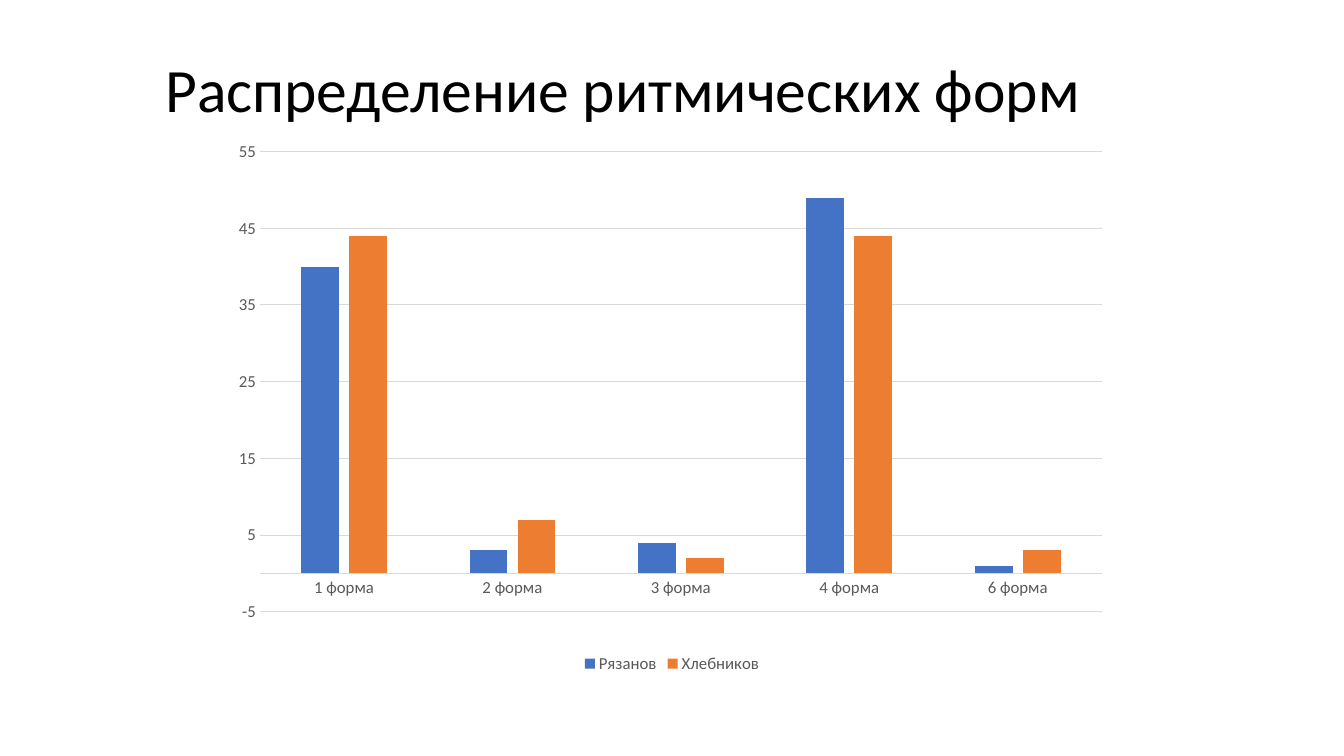
from lxml.etree import SubElement
from pptx import Presentation
from pptx.chart.data import CategoryChartData
from pptx.dml.color import RGBColor
from pptx.enum.chart import XL_CHART_TYPE as ChartType, XL_LEGEND_POSITION as LegendPos, XL_TICK_MARK as Tick
from pptx.enum.text import MSO_ANCHOR as Anchor
from pptx.oxml.ns import qn
from pptx.util import Pt

FONT = "Calibri"
BLACK = RGBColor(0x00, 0x00, 0x00)
GREY = RGBColor(0x59, 0x59, 0x59)
RULE = RGBColor(0xD9, 0xD9, 0xD9)
BLUE = RGBColor(0x44, 0x72, 0xC4)
ORANGE = RGBColor(0xED, 0x7D, 0x31)

FORMS = [f"{n} форма" for n in (1, 2, 3, 4, 6)]
POETS = [
    ("Рязанов", (40, 3, 4, 49, 1), BLUE),
    ("Хлебников", (44, 7, 2, 44, 3), ORANGE),
]


def style_font(font, size, color):
    font.name = FONT
    font.size = Pt(size)
    font.bold = False
    font.color.rgb = color


def style_line(line):
    line.color.rgb = RULE
    line.width = Pt(0.75)


def add_title(slide, text, x, y, w, h):
    tf = slide.shapes.add_textbox(Pt(x), Pt(y), Pt(w), Pt(h)).text_frame
    tf.word_wrap = True
    tf.vertical_anchor = Anchor.MIDDLE
    p = tf.paragraphs[0]
    p.line_spacing = 0.9
    r = p.add_run()
    r.text = text
    style_font(r.font, 44, BLACK)


def set_plot_layout(chart, x, y, w, h):
    plot_area = chart.plots[0]._element.getparent()
    layout = plot_area.find(qn("c:layout"))
    if layout is None:
        layout = plot_area.makeelement(qn("c:layout"))
        plot_area.insert(0, layout)
    manual = SubElement(layout, qn("c:manualLayout"))
    settings = [("layoutTarget", "inner"), ("xMode", "edge"), ("yMode", "edge"),
                ("x", x), ("y", y), ("w", w), ("h", h)]
    for tag, value in settings:
        SubElement(manual, qn(f"c:{tag}")).set("val", str(value))


def add_forms_chart(slide, x, y, w, h):
    data = CategoryChartData()
    data.categories = FORMS
    for name, values, _ in POETS:
        data.add_series(name, values)
    chart = slide.shapes.add_chart(
        ChartType.COLUMN_CLUSTERED, Pt(x), Pt(y), Pt(w), Pt(h), data).chart
    style_font(chart.font, 10, BLACK)
    chart.has_title = False

    plot = chart.plots[0]
    plot.vary_by_categories = False
    plot.gap_width = 219
    plot.overlap = -27
    for series, (_, _, color) in zip(plot.series, POETS):
        series.invert_if_negative = False
        series.format.fill.solid()
        series.format.fill.fore_color.rgb = color

    cat_axis, val_axis = chart.category_axis, chart.value_axis
    for axis in (cat_axis, val_axis):
        axis.major_tick_mark = axis.minor_tick_mark = Tick.NONE
        style_font(axis.tick_labels.font, 12, GREY)
    style_line(cat_axis.format.line)
    val_axis.format.line.fill.background()
    val_axis.minimum_scale = -5
    val_axis.maximum_scale = 55
    val_axis.major_unit = 10
    val_axis.has_major_gridlines = True
    style_line(val_axis.major_gridlines.format.line)

    chart.has_legend = True
    chart.legend.position = LegendPos.BOTTOM
    chart.legend.include_in_layout = False
    style_font(chart.legend.font, 12, GREY)
    set_plot_layout(chart, 0.04, 0.12, 0.94, 0.77)


def main():
    prs = Presentation()
    prs.slide_width, prs.slide_height = Pt(960), Pt(540)
    slide = prs.slides.add_slide(prs.slide_layouts[6])
    add_title(slide, "Распределение ритмических форм", 111, 13.5, 828, 104.5)
    add_forms_chart(slide, 160, 57, 640, 427)
    prs.save("out.pptx")


if __name__ == "__main__":
    main()
